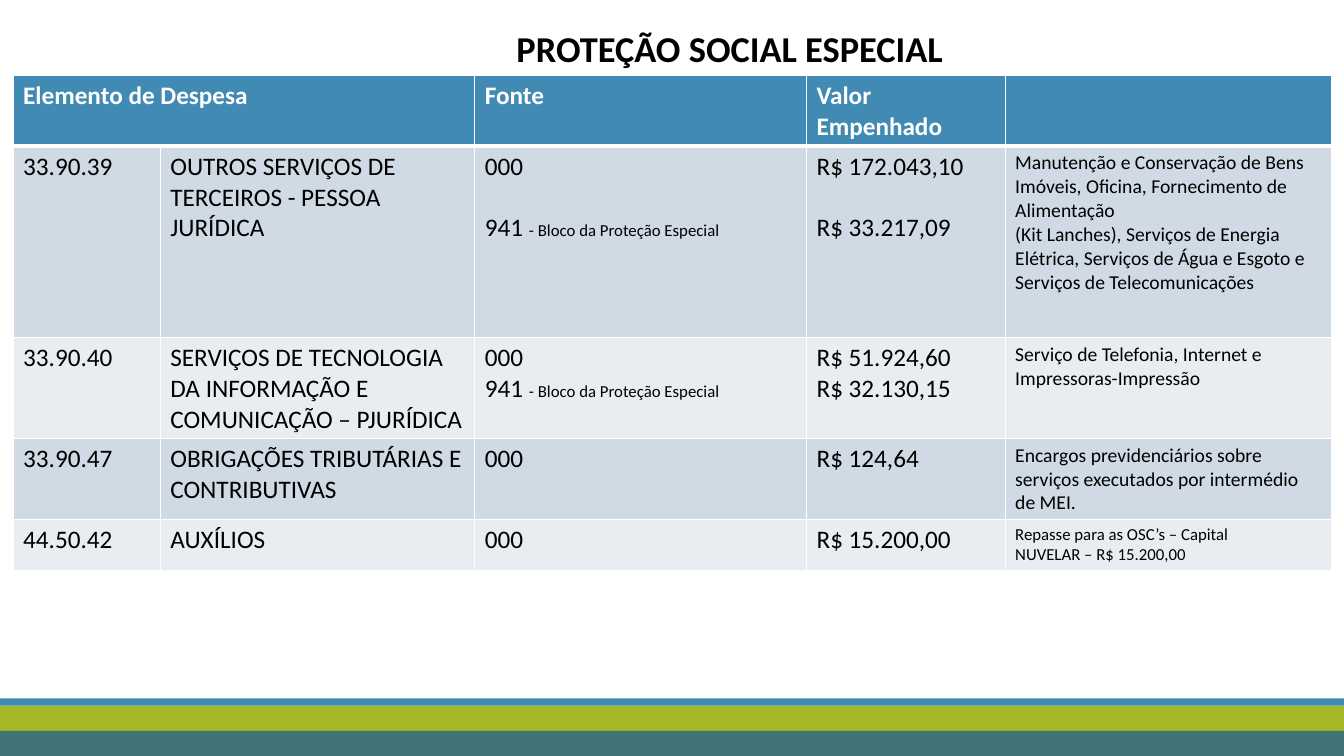
from lxml.etree import SubElement
from pptx import Presentation
from pptx.dml.color import RGBColor
from pptx.enum.shapes import MSO_SHAPE as Shape
from pptx.enum.text import PP_ALIGN as Align
from pptx.oxml import parse_xml
from pptx.oxml.ns import nsdecls, qn
from pptx.util import Inches, Pt

WHITE = RGBColor(0xFF, 0xFF, 0xFF)
BLACK = RGBColor(0, 0, 0)
BLUE = RGBColor(0x41, 0x8A, 0xB3)
GREEN = RGBColor(0xA6, 0xB7, 0x27)
TEAL = RGBColor(0x31, 0x68, 0x86)
BANDS = RGBColor(0xCF, 0xDA, 0xE5), RGBColor(0xE9, 0xED, 0xF2)

WIDTH = 13.33
COLS = 1.46, 3.12, 3.29, 1.97, 3.24
HIGHS = 0.7, 1.9, 1, 0.79, 0.51
SIZES = 18, 14, 14, 14, 12
GAPS = 0, 22, 0, 0, 0
NOTE = "941 |- Bloco da Proteção Especial"
ROWS = (
    ("Elemento de Despesa", "", "Fonte", "Valor Empenhado", ""),
    ("33.90.39", "OUTROS SERVIÇOS DE TERCEIROS - PESSOA JURÍDICA",
     "000\n" + NOTE, "R$ 172.043,10\nR$ 33.217,09",
     "Manutenção e Conservação de Bens Imóveis, Oficina, Fornecimento de "
     "Alimentação\n(Kit Lanches), Serviços de Energia Elétrica, Serviços de "
     "Água e Esgoto e Serviços de Telecomunicações"),
    ("33.90.40",
     "SERVIÇOS DE TECNOLOGIA DA INFORMAÇÃO E COMUNICAÇÃO – PJURÍDICA",
     "000\n" + NOTE, "R$ 51.924,60\nR$ 32.130,15",
     "Serviço de Telefonia, Internet e Impressoras-Impressão"),
    ("33.90.47", "OBRIGAÇÕES TRIBUTÁRIAS E CONTRIBUTIVAS", "000",
     "R$ 124,64",
     "Encargos previdenciários sobre serviços executados por intermédio "
     "de MEI."),
    ("44.50.42", "AUXÍLIOS", "000", "R$ 15.200,00",
     "Repasse para as OSC’s – Capital\nNUVELAR – R$ 15.200,00"),
)


class Deck:
    """Hold the style and the current slide."""

    font = "Calibri"

    def __init__(self):
        self.prs = Presentation()
        self.prs.slide_width = Inches(WIDTH)
        self.prs.slide_height = Inches(7.5)
        self.slide = self.prs.slides.add_slide(self.prs.slide_layouts[6])

    def bar(self, top, high, color, alpha=100):
        bar = self.slide.shapes.add_shape(
            Shape.RECTANGLE, 0, Inches(top), Inches(WIDTH), Inches(high))
        bar.shadow.inherit = False
        bar.fill.solid()
        bar.fill.fore_color.rgb = color
        bar.line.fill.background()
        if alpha < 100:
            tint = bar.fill._xPr.find(".//" + qn("a:srgbClr"))
            SubElement(tint, qn("a:alpha"), val=str(alpha * 1000))

    def style(self, run, size, color=BLACK, bold=False):
        run.font.name = self.font
        run.font.size = Pt(size)
        run.font.color.rgb = color
        run.font.bold = bold

    def title(self, text, left, top, wide, high):
        box = self.slide.shapes.add_textbox(
            Inches(left), Inches(top), Inches(wide), Inches(high))
        frame = box.text_frame
        frame.word_wrap = True
        frame.text = text
        para = frame.paragraphs[0]
        para.alignment = Align.CENTER
        self.style(para.runs[0], 26, bold=True)

    def edge(self, cell, thick_top, thick_end):
        props = cell._tc.get_or_add_tcPr()
        widths = {"L": 1, "R": 1, "T": 3 if thick_top else 1,
                  "B": 3 if thick_end else 1}
        for spot, (side, width) in enumerate(widths.items()):
            props.insert(spot, parse_xml(
                f'<a:ln{side} {nsdecls("a")} w="{Pt(width)}"><a:solidFill>'
                f'<a:srgbClr val="{WHITE}"/></a:solidFill></a:ln{side}>'))

    def cell(self, cell, text, size, head, gap):
        cell.text_frame.text = text
        for num, para in enumerate(cell.text_frame.paragraphs):
            if num and gap:
                para.space_before = Pt(gap)
            main, _, note = para.text.partition("|")
            if note:
                para.text = main
                run = para.add_run()
                run.text = note
                self.style(run, 12)
            if para.runs:
                self.style(para.runs[0], size, WHITE if head else BLACK, head)

    def table(self, left, top):
        grid = self.slide.shapes.add_table(
            len(ROWS), len(COLS), Inches(left), Inches(top),
            Inches(sum(COLS)), Inches(sum(HIGHS))).table
        for col, wide in zip(grid.columns, COLS):
            col.width = Inches(wide)
        for i, row in enumerate(ROWS):
            grid.rows[i].height = Inches(HIGHS[i])
            for j, text in enumerate(row):
                cell = grid.cell(i, j)
                size = SIZES[i] if j == 4 else 18
                gap = GAPS[i] if j in (2, 3) else 0
                self.cell(cell, text, size, i == 0, gap)
                cell.fill.solid()
                cell.fill.fore_color.rgb = BANDS[(i - 1) % 2] if i else BLUE
                self.edge(cell, i == 1, i == 0)
        grid.cell(0, 0).merge(grid.cell(0, 1))


def main():
    deck = Deck()
    deck.bar(7, 0.5, GREEN)
    deck.bar(6.93, 0.07, BLUE)
    deck.bar(7.25, 0.25, TEAL, 85)
    deck.title("PROTEÇÃO SOCIAL ESPECIAL", 5, 0.21, 4.48, 0.54)
    deck.table(0.13, 0.75)
    deck.prs.save("out.pptx")


if __name__ == "__main__":
    main()
